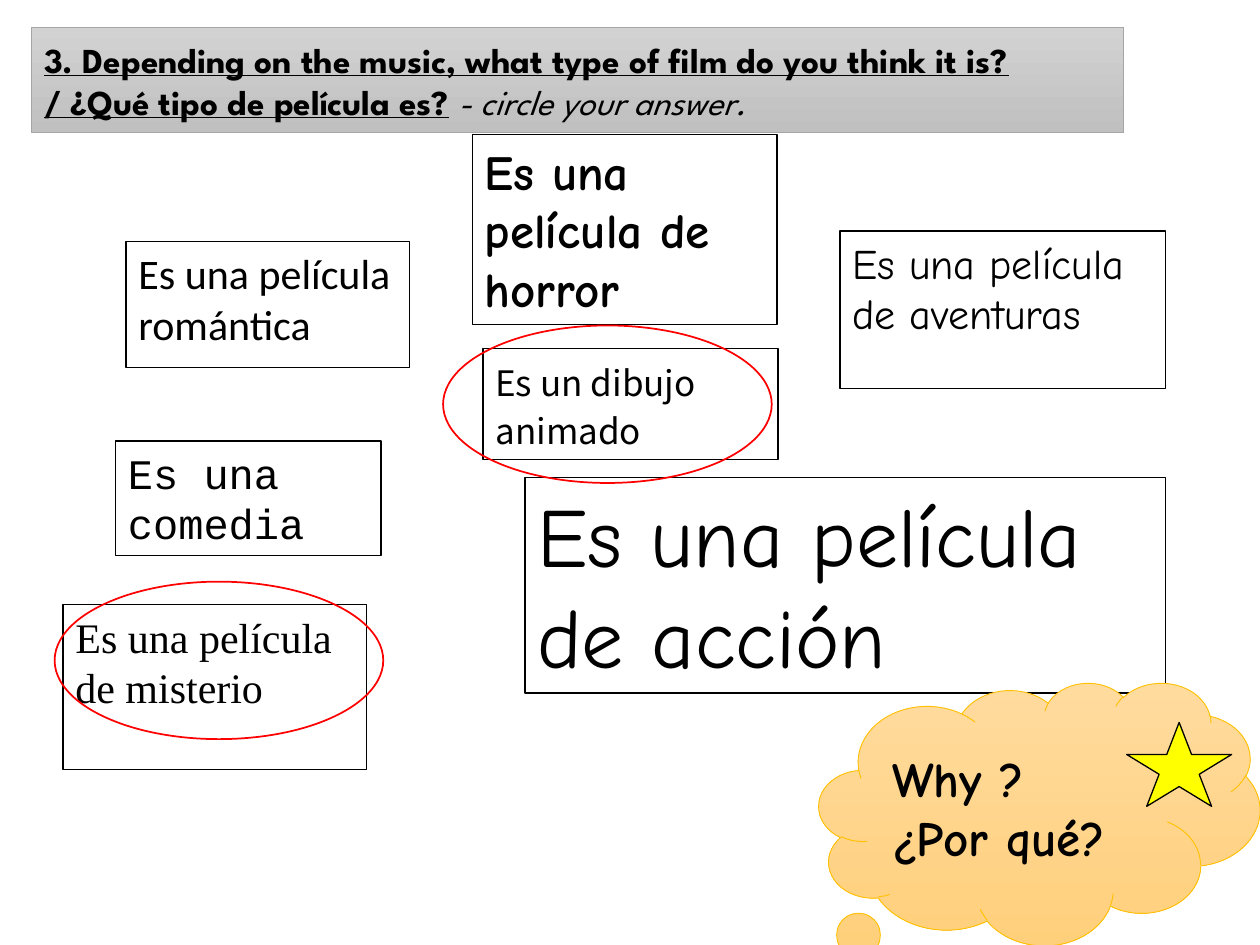
from dataclasses import dataclass

from pptx import Presentation
from pptx.dml.color import RGBColor
from pptx.enum.shapes import MSO_SHAPE
from pptx.enum.text import MSO_ANCHOR, MSO_AUTO_SIZE, PP_ALIGN
from pptx.util import Inches, Pt

BLACK = RGBColor(0x00, 0x00, 0x00)
WHITE = RGBColor(0xFF, 0xFF, 0xFF)
RED = RGBColor(0xFF, 0x00, 0x00)
YELLOW = RGBColor(0xFF, 0xFF, 0x00)
GREY = RGBColor(0xA5, 0xA5, 0xA5)
GREYS = (RGBColor(0xD2, 0xD2, 0xD2), RGBColor(0xC0, 0xC0, 0xC0))
GOLD = RGBColor(0xFF, 0xC0, 0x00)
GOLDS = (RGBColor(0xFF, 0xDB, 0x9E), RGBColor(0xFF, 0xD0, 0x7C))
COMIC = "Comic Neue"

# The slide is a grid of 120 columns by 90 rows
COLS, ROWS = 120, 90
deck = Presentation()
deck.slide_width, deck.slide_height = Inches(10), Inches(7.5)
UNIT_X, UNIT_Y = deck.slide_width / COLS, deck.slide_height / ROWS


@dataclass
class Area:
    col: float
    row: float
    wide: float
    high: float


@dataclass
class Card:
    area: Area
    text: str
    font: str
    size: int = 24
    bold: bool = False
    grow: bool = True
    space: float = 1.0


def place(area: Area) -> tuple:
    return (round(area.col * UNIT_X), round(area.row * UNIT_Y),
            round(area.wide * UNIT_X), round(area.high * UNIT_Y))


def paint(shape, fill, line: RGBColor, width: float) -> None:
    """Fill with a colour, a pair of colours from top to bottom, or nothing."""
    if fill is None:
        shape.fill.background()
    elif isinstance(fill, RGBColor):
        shape.fill.solid()
        shape.fill.fore_color.rgb = fill
    else:
        shape.fill.gradient()
        shape.fill.gradient_angle = 270
        for stop, tone in zip(shape.fill.gradient_stops, fill):
            stop.color.rgb = tone
    shape.line.color.rgb = line
    shape.line.width = Pt(width)


def draw(kind: MSO_SHAPE, area: Area, fill, line=BLACK, width=0.75):
    shape = slide.shapes.add_shape(kind, *place(area))
    shape.shadow.inherit = False
    paint(shape, fill, line, width)
    return shape


def write(para, text: str, *, font: str, size: int, bold=False,
          italic=False, under=False, space=1.0) -> None:
    para.alignment = PP_ALIGN.LEFT
    para.line_spacing = space
    run = para.add_run()
    run.text = text
    face = run.font
    face.name, face.size = font, Pt(size)
    face.bold, face.italic, face.underline = bold, italic, under
    face.color.rgb = BLACK


def setup(shape, anchor: MSO_ANCHOR, grow: bool):
    frame = shape.text_frame
    frame.word_wrap = True
    frame.vertical_anchor = anchor
    frame.auto_size = MSO_AUTO_SIZE.SHAPE_TO_FIT_TEXT if grow else MSO_AUTO_SIZE.NONE
    return frame


def deal(card: Card) -> None:
    shape = draw(MSO_SHAPE.RECTANGLE, card.area, WHITE)
    frame = setup(shape, MSO_ANCHOR.TOP, card.grow)
    write(frame.paragraphs[0], card.text, font=card.font, size=card.size,
          bold=card.bold, space=card.space)


def ring(col: float, row: float) -> None:
    draw(MSO_SHAPE.OVAL, Area(col, row, 31.3, 15), None, RED, 1)


# Title bar
slide = deck.slides.add_slide(deck.slide_layouts[5])
title = slide.shapes.title
title.left, title.top, title.width, title.height = place(Area(3, 3, 104, 9.24))
paint(title, GREYS, GREY, 0.5)
frame = setup(title, MSO_ANCHOR.MIDDLE, True)
head = {"font": "League Spartan", "size": 20}
write(frame.paragraphs[0],
      "3. Depending on the music, what type of film do you think it is?",
      bold=True, under=True, **head)
para = frame.add_paragraph()
write(para, "/ ¿Qué tipo de película es?", bold=True, under=True, **head)
write(para, " ", **head)
write(para, "- circle your answer.", italic=True, **head)

# Film types
for card in (
    Card(Area(12, 23, 27, 12), "Es una película romántica", "Calibri", grow=False),
    Card(Area(45, 12.84, 29, 18.1), "Es una película de horror", COMIC, 28, bold=True),
    Card(Area(11, 42, 25.3, 10.9), "Es una comedia", "Courier New"),
    Card(Area(50, 45.5, 61, 20.5), "Es una película de acción", COMIC, 48),
    Card(Area(80, 22, 31, 15), "Es una película de aventuras", COMIC, grow=False),
):
    deal(card)

# Thought cloud with its star
cloud = draw(MSO_SHAPE.CLOUD_CALLOUT, Area(78, 65, 42, 25), GOLDS, GOLD, 0.5)
cloud.adjustments[0], cloud.adjustments[1] = -0.595, 0.671
frame = setup(cloud, MSO_ANCHOR.MIDDLE, False)
write(frame.paragraphs[0], "Why ?", font=COMIC, size=28, bold=True)
write(frame.add_paragraph(), "¿Por qué?", font=COMIC, size=28, bold=True)
draw(MSO_SHAPE.STAR_5_POINT, Area(107.3, 68.8, 10, 8), YELLOW)

# Circled answers
deal(Card(Area(6, 57.6, 28.9, 15.7), "Es una película de misterio", "Times New Roman"))
ring(5.2, 55.4)
deal(Card(Area(46, 33.2, 28.1, 10.6), "Es un dibujo animado", "Noto Sans CJK JP",
          20, space=1.15))
ring(42.2, 31)

deck.save("out.pptx")
